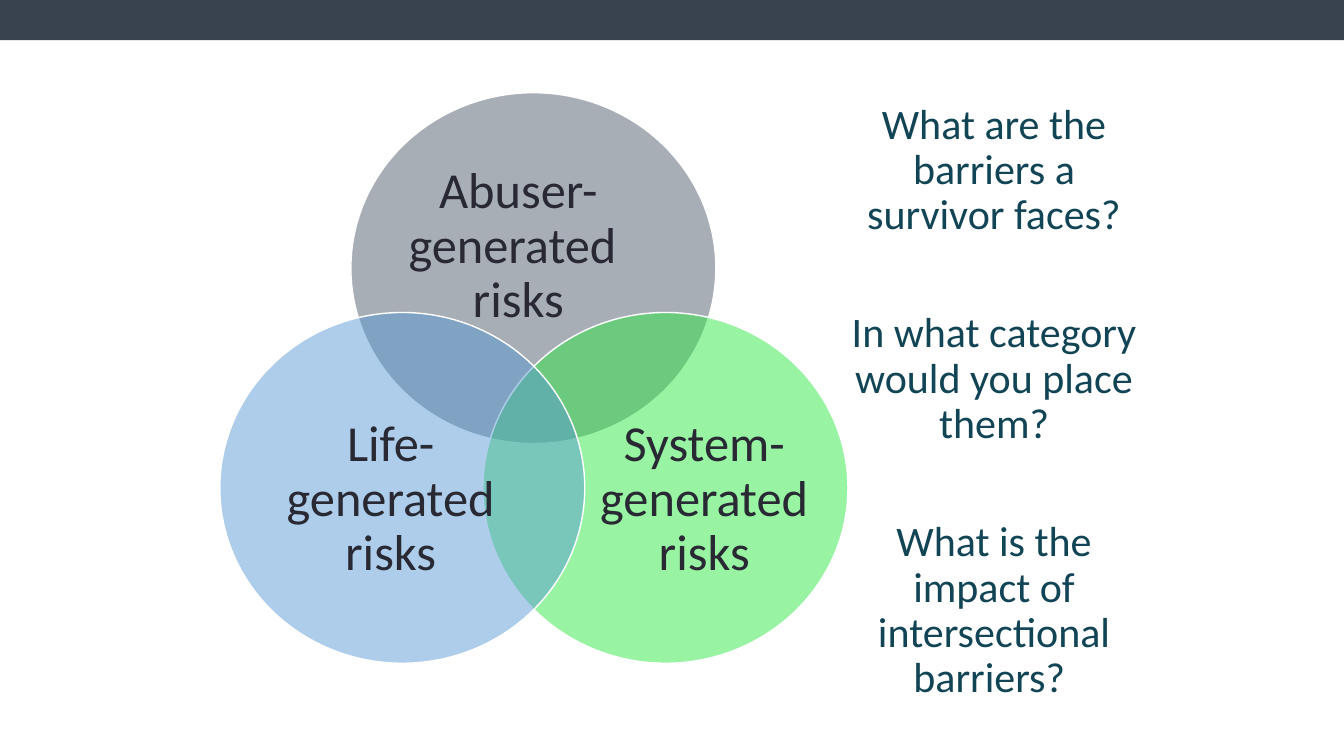
from pptx import Presentation
from pptx import util as u
from pptx.dml import color
from pptx.enum import shapes, text
from pptx.oxml import xmlchemy
from lxml import etree

NS = "http://schemas.openxmlformats.org/drawingml/2006/main"


def paint(hue):
    return color.RGBColor.from_string(hue)


def write(frame, lines, size, hue, font="Calibri", gap=0):
    for i, line in enumerate(lines):
        para = frame.paragraphs[0] if i == 0 else frame.add_paragraph()
        para.alignment = text.PP_ALIGN.CENTER
        para.line_spacing = 0.9
        para.space_before = u.Pt(gap if i else 0)
        run = para.add_run()
        run.text = line
        run.font.name = font
        run.font.size = u.Pt(size)
        run.font.color.rgb = paint(hue)


class Board:
    dark = "39434F"
    ink = "292934"
    teal = "114454"
    white = "FFFFFF"

    def __init__(self, deck):
        self.slide = deck.slides.add_slide(deck.slide_layouts[6])

    def shape(self, kind, box, fill):
        item = self.slide.shapes.add_shape(kind, *map(u.Inches, box))
        item.shadow.inherit = False
        item.fill.solid()
        item.fill.fore_color.rgb = paint(fill)
        return item

    def bar(self, box):
        self.shape(shapes.MSO_SHAPE.RECTANGLE, box, self.dark).line.fill.background()

    def circle(self, left, top, fill):
        item = self.shape(shapes.MSO_SHAPE.OVAL, (left, top, 3.62, 3.48), fill)
        item.line.color.rgb = paint(self.white)
        item.line.width = u.Pt(1)
        tone = item.fill._xPr.find(f"{{{NS}}}solidFill")[0]
        etree.SubElement(tone, f"{{{NS}}}alpha").set("val", "49000")

    def label(self, box, lines, size, hue, inset=0, gap=0, anchor="MIDDLE"):
        frame = self.slide.shapes.add_textbox(*map(u.Inches, box)).text_frame
        frame.word_wrap = True
        frame.vertical_anchor = text.MSO_ANCHOR[anchor]
        frame.margin_left = frame.margin_right = u.Inches(inset)
        frame.margin_top = frame.margin_bottom = u.Inches(inset)
        write(frame, lines, size, hue, gap=gap)


def main():
    deck = Presentation()
    deck.slide_width, deck.slide_height = u.Inches(13.33), u.Inches(7.5)
    board = Board(deck)
    board.bar((0, 0, 13.33, 0.4))
    risks = [
        (3.48, 0.92, "4C5A6A", (3.65, 1.53, 2.98, 1.84),
         ["Abuser-", "generated ", "risks"]),
        (4.79, 3.1, "2EE844", (5.9, 4, 2.17, 1.92),
         ["System-", "generated risks"]),
        (2.18, 3.1, "5999D5", (2.43, 4, 2.89, 1.92),
         ["Life-generated risks"]),
    ]
    for left, top, fill, box, lines in risks:
        board.circle(left, top, fill)
        board.label(box, lines, 36, board.ink)
    asks = [
        "What are the barriers a survivor faces?",
        "In what category would you place them?",
        "What is the impact of intersectional barriers? ",
    ]
    board.label((8.26, 0.92, 3.2, 6.32), asks, 30, board.teal,
                inset=0.1, gap=52, anchor="TOP")
    deck.save("out.pptx")


if __name__ == "__main__":
    main()
